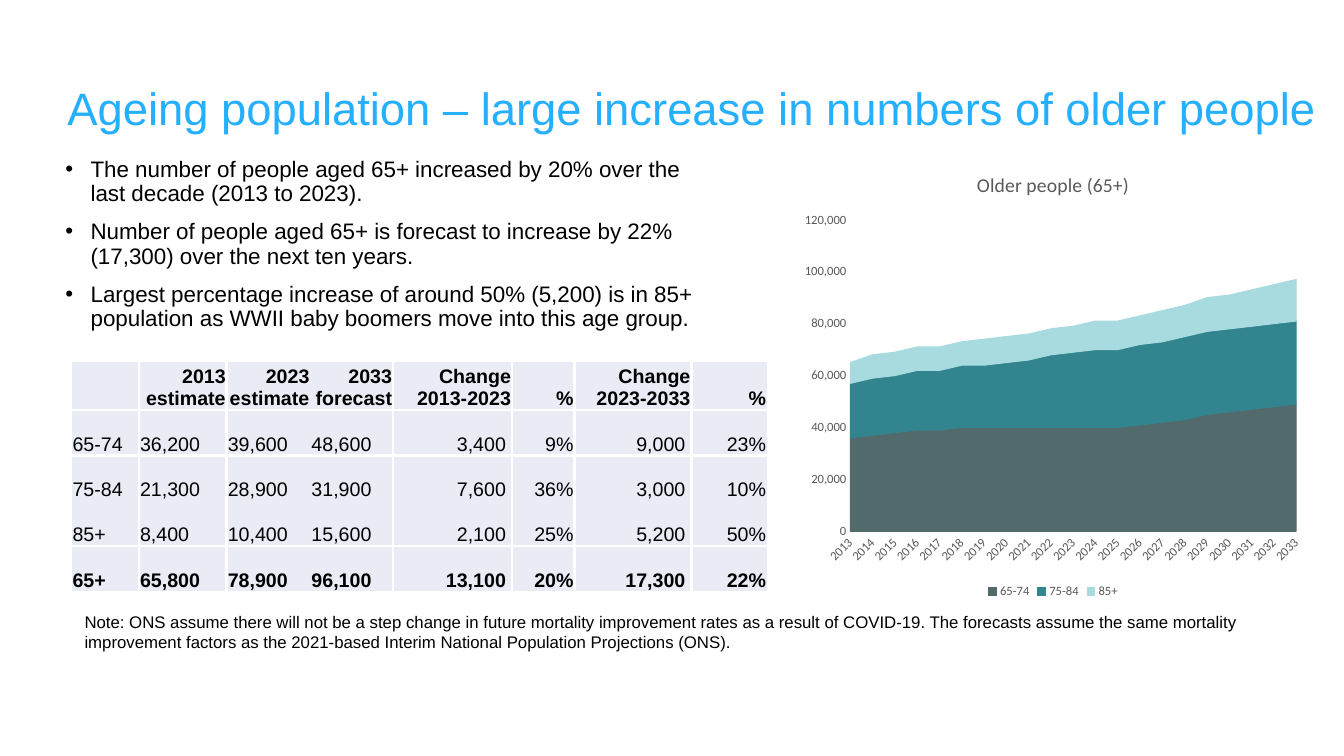
from lxml import etree
from pptx import Presentation
from pptx.chart.data import CategoryChartData
from pptx.dml.color import RGBColor
from pptx.enum.chart import XL_CHART_TYPE, XL_LEGEND_POSITION, XL_TICK_MARK
from pptx.enum.text import MSO_ANCHOR, PP_ALIGN
from pptx.oxml.ns import qn
from pptx.util import Inches, Pt

SKY = RGBColor(0x24, 0xAF, 0xFF)
BLACK = RGBColor(0, 0, 0)
GREY = RGBColor(0x59, 0x59, 0x59)
AXIS_GREY = RGBColor(0xD9, 0xD9, 0xD9)
CELL_FILL = RGBColor(0xE9, 0xEB, 0xF5)
SLATE = RGBColor(0x53, 0x6A, 0x6D)
TEAL = RGBColor(0x32, 0x85, 0x8E)
PALE_TEAL = RGBColor(0xA8, 0xDB, 0xE0)
LEFT, RIGHT = PP_ALIGN.LEFT, PP_ALIGN.RIGHT
TOP, MIDDLE, BOTTOM = MSO_ANCHOR.TOP, MSO_ANCHOR.MIDDLE, MSO_ANCHOR.BOTTOM
AREA_STACKED = XL_CHART_TYPE.AREA_STACKED
LEGEND_BOTTOM = XL_LEGEND_POSITION.BOTTOM
NO_TICK = XL_TICK_MARK.NONE
PLAIN_TABLE_STYLE = "{2D5ABB26-0587-4C30-8999-92F81FD0307C}"


def write_text(frame, *lines, size, color=BLACK, font="Arial", bold=False,
               align=LEFT, spacing=1.0, gap=0, bullet=False):
    """Fill a text frame with one paragraph per line."""
    frame.word_wrap = True
    for index, line in enumerate(lines):
        para = frame.paragraphs[0] if index == 0 else frame.add_paragraph()
        para.alignment = align
        para.line_spacing = spacing
        para.space_before = Pt(gap if index else 0)
        if bullet:
            properties = para._p.get_or_add_pPr()
            properties.set("marL", str(Inches(0.25)))
            properties.set("indent", str(-Inches(0.25)))
            etree.SubElement(properties, qn("a:buFont"), typeface="Arial")
            etree.SubElement(properties, qn("a:buChar"), char="•")
        span = para.add_run()
        span.text = line
        span.font.size = Pt(size)
        span.font.name = font
        span.font.bold = bold
        span.font.color.rgb = color


def add_white_border(cell, side):
    """Draw a white edge on one side: L, R, T or B."""
    line = etree.Element(qn(f"a:ln{side}"), w=str(Pt(2.25)))
    fill = etree.SubElement(line, qn("a:solidFill"))
    etree.SubElement(fill, qn("a:srgbClr"), val="FFFFFF")
    properties = cell._tc.get_or_add_tcPr()
    borders = [child for child in properties if child.tag.startswith(qn("a:ln"))]
    properties.insert(len(borders), line)


deck = Presentation()
deck.slide_width = Inches(13.33)
deck.slide_height = Inches(7.5)
page = deck.slides.add_slide(deck.slide_layouts[6])

# Title, bullets and note
title_box = page.shapes.add_textbox(Inches(0.57), Inches(0.85), Inches(12.76), Inches(0.5))
title_box.text_frame.vertical_anchor = MIDDLE
write_text(title_box.text_frame,
           "Ageing population – large increase in numbers of older people",
           size=32.4, color=SKY, spacing=0.9)

bullet_box = page.shapes.add_textbox(Inches(0.55), Inches(1.52), Inches(6.62), Inches(1.82))
write_text(
    bullet_box.text_frame,
    "The number of people aged 65+ increased by 20% over the last decade (2013 to 2023).",
    "Number of people aged 65+ is forecast to increase by 22% (17,300) over the next ten years.",
    "Largest percentage increase of around 50% (5,200) is in 85+ population as WWII baby "
    "boomers move into this age group.",
    size=16, spacing=0.9, gap=10, bullet=True)

note_box = page.shapes.add_textbox(Inches(0.74), Inches(6.02), Inches(12.5), Inches(0.81))
write_text(
    note_box.text_frame,
    "Note: ONS assume there will not be a step change in future mortality improvement rates "
    "as a result of COVID-19. The forecasts assume the same mortality improvement factors as "
    "the 2021-based Interim National Population Projections (ONS).",
    size=12)

# Population table
population_rows = [
    ["", "2013 estimate", "2023 estimate", "2033 forecast",
     "Change 2013-2023", "%", "Change 2023-2033", "%"],
    ["65-74", "36,200", "39,600", "48,600", "3,400", "9%", "9,000", "23%"],
    ["75-84", "21,300", "28,900", "31,900", "7,600", "36%", "3,000", "10%"],
    ["85+", "8,400", "10,400", "15,600", "2,100", "25%", "5,200", "50%"],
    ["65+", "65,800", "78,900", "96,100", "13,100", "20%", "17,300", "22%"],
]
column_widths = [0.67, 0.87, 0.83, 0.82, 1.18, 0.62, 1.16, 0.75]
CHANGE_COLUMNS = (4, 6)
LAST_ROW = len(population_rows) - 1
GROUP_STARTS = (1, 4, 6)
RULED_ROWS = (1, LAST_ROW)

table = page.shapes.add_table(len(population_rows), len(column_widths), Inches(0.71),
                              Inches(3.59), Inches(6.9), Inches(2.25)).table
table._tbl.tblPr.find(qn("a:tableStyleId")).text = PLAIN_TABLE_STYLE
table.horz_banding = False
for column, width in zip(table.columns, column_widths):
    column.width = Inches(width)
for row_index, values in enumerate(population_rows):
    table.rows[row_index].height = Inches(0.45)
    for column_index, value in enumerate(values):
        cell = table.cell(row_index, column_index)
        is_header = row_index == 0
        cell.margin_left = cell.margin_top = Inches(0.01)
        cell.margin_bottom = 0
        indented = column_index in CHANGE_COLUMNS and not is_header
        cell.margin_right = Inches(0.06 if indented else 0.01)
        cell.vertical_anchor = BOTTOM
        cell.fill.solid()
        cell.fill.fore_color.rgb = CELL_FILL
        write_text(cell.text_frame, value, size=14,
                   bold=row_index in (0, LAST_ROW),
                   align=RIGHT if is_header or column_index >= 4 else LEFT)
        if column_index in GROUP_STARTS:
            add_white_border(cell, "L")
        if column_index + 1 in GROUP_STARTS:
            add_white_border(cell, "R")
        if row_index in RULED_ROWS:
            add_white_border(cell, "T")
        if row_index + 1 in RULED_ROWS:
            add_white_border(cell, "B")

# Stacked area chart, values in thousands of people
age_groups = [
    ("65-74", SLATE, [36, 37, 38, 39, 39, 40, 40, 40, 40, 40, 40,
                      40, 40, 41, 42, 43, 45, 46, 47, 48, 49]),
    ("75-84", TEAL, [21, 22, 22, 23, 23, 24, 24, 25, 26, 28, 29,
                     30, 30, 31, 31, 32, 32, 32, 32, 32, 32]),
    ("85+", PALE_TEAL, [8, 9, 9, 9, 9, 9, 10, 10, 10, 10, 10,
                        11, 11, 11, 12, 12, 13, 13, 14, 15, 16]),
]
chart_data = CategoryChartData(number_format="#,##0")
chart_data.categories = [str(year) for year in range(2013, 2034)]
for name, color, thousands in age_groups:
    chart_data.add_series(name, [value * 1000 for value in thousands])
chart = page.shapes.add_chart(AREA_STACKED, Inches(7.88), Inches(1.52),
                              Inches(5.13), Inches(4.46), chart_data).chart
chart.font.name = "Calibri"
chart.font.size = Pt(10)
chart.font.color.rgb = BLACK
chart.has_title = True
write_text(chart.chart_title.text_frame, "Older people (65+)",
           size=14, color=GREY, font="Calibri")
chart.plots[0].vary_by_categories = False
for series, (name, color, thousands) in zip(chart.plots[0].series, age_groups):
    series.format.fill.solid()
    series.format.fill.fore_color.rgb = color
    series.format.line.color.rgb = color
    series.format.line.width = Pt(0.75)

chart.has_legend = True
chart.legend.position = LEGEND_BOTTOM
chart.legend.include_in_layout = False
year_axis, people_axis = chart.category_axis, chart.value_axis
for part in (chart.legend, year_axis.tick_labels, people_axis.tick_labels):
    part.font.name = "Calibri"
    part.font.size = Pt(9)
    part.font.color.rgb = GREY
for axis in (year_axis, people_axis):
    axis.has_major_gridlines = False
    axis.major_tick_mark = axis.minor_tick_mark = NO_TICK
year_axis.format.line.color.rgb = AXIS_GREY
year_axis.format.line.width = Pt(0.75)
year_axis._element.find(qn("c:txPr")).find(qn("a:bodyPr")).set("rot", "-2700000")
people_axis.format.line.fill.background()
people_axis.minimum_scale = 0
people_axis.maximum_scale = 120000
people_axis.major_unit = 20000
people_axis.tick_labels.number_format = "#,##0"
people_axis.tick_labels.number_format_is_linked = False
for crossing in people_axis._element.findall(qn("c:crossBetween")):
    crossing.set("val", "midCat")

deck.save("out.pptx")
